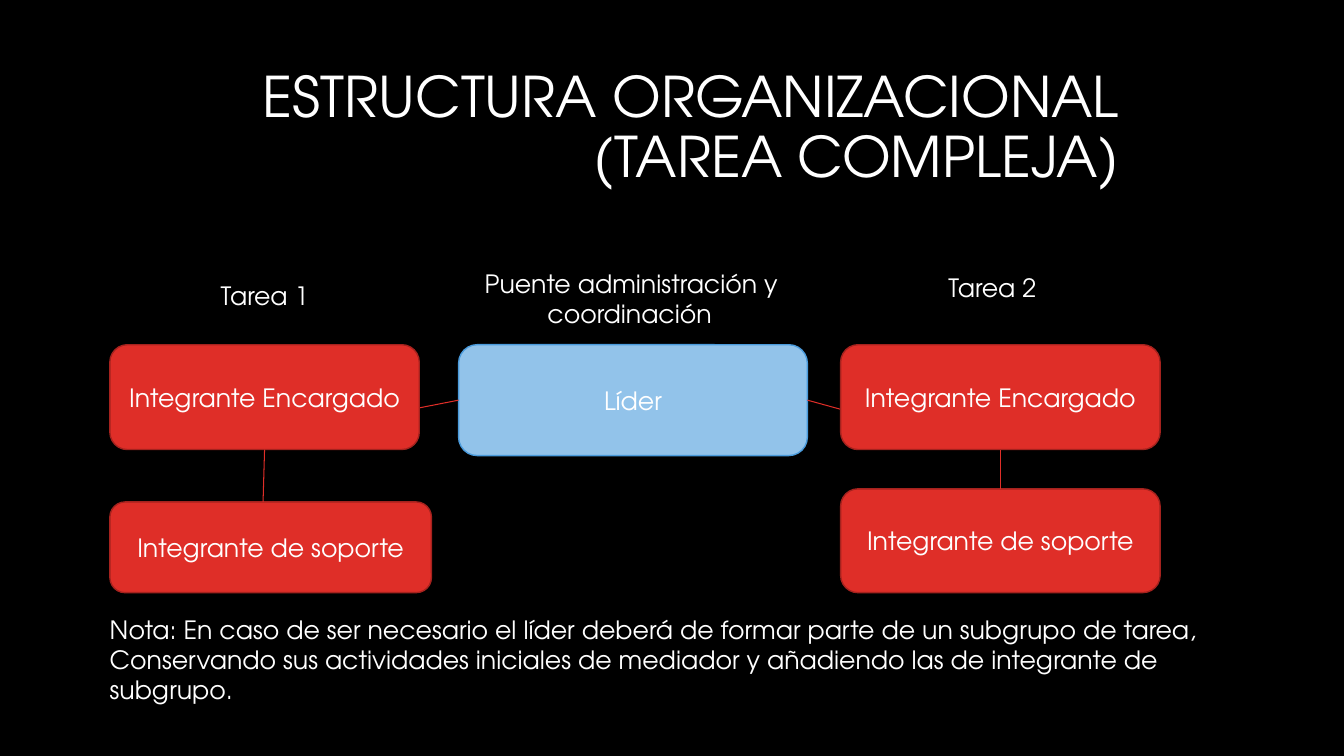
import pptx
import pptx.util
import pptx.dml.color
import pptx.enum.shapes
import pptx.enum.text
import pptx.oxml.ns
import lxml.etree

COLORS = {"bg": "000000", "text": "FFFFFF", "red": "DF2E28", "red_edge": "A5221E",
          "blue": "92C3EA", "blue_edge": "4A9BDC"}
FONT = "TeX Gyre Adventor"
COLS, ROWS = 40, 22.5
ALIGN = pptx.enum.text.PP_ALIGN
ANCHOR = pptx.enum.text.MSO_ANCHOR
TOP, LEFT, BOTTOM, RIGHT = range(4)


def color(name):
    return pptx.dml.color.RGBColor.from_string(COLORS[name])


class OrgSlide:
    """Style and current slide; all lengths are grid columns and rows."""

    def __init__(self, prs):
        self.cell_w = prs.slide_width / COLS
        self.cell_h = prs.slide_height / ROWS
        self.slide = prs.slides.add_slide(prs.slide_layouts[5])
        self.slide.background.fill.solid()
        self.slide.background.fill.fore_color.rgb = color("bg")

    def x(self, cols):
        return pptx.util.Emu(round(cols * self.cell_w))

    def y(self, rows):
        return pptx.util.Emu(round(rows * self.cell_h))

    def area(self, left, top, width, height):
        return self.x(left), self.y(top), self.x(width), self.y(height)

    def set_text(self, sp, text, size=18, align=ALIGN.LEFT, anchor=ANCHOR.TOP):
        tf = sp.text_frame
        tf.text = text
        tf.word_wrap = True
        tf.auto_size = pptx.enum.text.MSO_AUTO_SIZE.NONE
        tf.vertical_anchor = anchor
        for p in tf.paragraphs:
            p.alignment = align
            for r in p.runs:
                r.font.name = FONT
                r.font.size = pptx.util.Pt(size)
                r.font.color.rgb = color("text")
        return tf

    def title(self, text, *area):
        sp = self.slide.shapes.title
        sp.left, sp.top, sp.width, sp.height = self.area(*area)
        tf = self.set_text(sp, text, 40, ALIGN.RIGHT, ANCHOR.MIDDLE)
        tf.paragraphs[0].line_spacing = 0.9

    def box(self, text, *area, fill="red"):
        shape = pptx.enum.shapes.MSO_SHAPE.ROUNDED_RECTANGLE
        sp = self.slide.shapes.add_shape(shape, *self.area(*area))
        sp.shadow.inherit = False
        sp.fill.solid()
        sp.fill.fore_color.rgb = color(fill)
        sp.line.color.rgb = color(fill + "_edge")
        sp.line.width = pptx.util.Pt(1)
        self.set_text(sp, text, align=ALIGN.CENTER, anchor=ANCHOR.MIDDLE)
        return sp

    def label(self, text, *area, last_indent=0):
        sp = self.slide.shapes.add_textbox(*self.area(*area))
        tf = self.set_text(sp, text)
        tf.auto_size = pptx.enum.text.MSO_AUTO_SIZE.SHAPE_TO_FIT_TEXT
        if last_indent:
            pPr = tf.paragraphs[-1]._p.get_or_add_pPr()
            pPr.set("marL", str(self.x(last_indent)))

    def link(self, start, side, end=(0, 0), end_box=None, arrow=False):
        kind = pptx.enum.shapes.MSO_CONNECTOR.STRAIGHT
        sp = self.slide.shapes.add_connector(kind, 0, 0, self.x(end[0]), self.y(end[1]))
        sp.begin_connect(start, side)
        if end_box is not None:
            sp.end_connect(end_box, TOP)
        sp.line.color.rgb = color("red")
        sp.line.width = pptx.util.Pt(0.75)
        qn = pptx.oxml.ns.qn
        if arrow:
            ln = sp._element.spPr.find(qn("a:ln"))
            lxml.etree.SubElement(ln, qn("a:tailEnd"), type="triangle")
        lxml.etree.SubElement(sp._element.spPr, qn("a:effectLst"))


def main():
    prs = pptx.Presentation()
    prs.slide_width = pptx.util.Inches(13.33)
    prs.slide_height = pptx.util.Inches(7.5)
    org = OrgSlide(prs)
    org.title("ESTRUCTURA ORGANIZACIONAL\v(TAREA COMPLEJA)", 5.34, 1.74, 28.26, 4.23)

    # Leader, with arrows that run behind the boxes of both tasks
    lead_top, left_col, right_col, right_w, lead_h = 10.26, 3.27, 25.02, 9.51, 3.12
    leader = org.box("Líder", 13.65, lead_top, 10.38, 3.3, fill="blue")
    org.link(leader, LEFT, end=(8.46, 12.93), arrow=True)
    org.link(leader, RIGHT, end=(29.04, 13.29), arrow=True)

    # Members of each task
    head, support = "Integrante Encargado", "Integrante de soporte"
    head_1 = org.box(head, left_col, lead_top, 9.21, lead_h)
    head_2 = org.box(head, right_col, lead_top, right_w, lead_h)
    org.box(support, left_col, 14.94, 9.57, 2.7)
    support_2 = org.box(support, right_col, 14.55, right_w, 3.09)
    org.link(head_1, BOTTOM, end=(7.83, 14.94))
    org.link(head_2, BOTTOM, end_box=support_2)

    # Labels and note
    org.label("Tarea 1", 6.27, 8.19, 5.88, 1.2)
    org.label("Tarea 2", 27.93, 7.95, 6.18, 1.2)
    org.label("Puente administración y\ncoordinación", 14.13, 7.83, 10.68, 2.13,
              last_indent=1.87)
    org.label("Nota: En caso de ser necesario el líder deberá de formar parte de un "
              "subgrupo de tarea,\nConservando sus actividades iniciales de mediador y "
              "añadiendo las de integrante de subgrupo.", 2.97, 18.12, 35.4, 3.03)

    prs.save("out.pptx")


if __name__ == "__main__":
    main()
